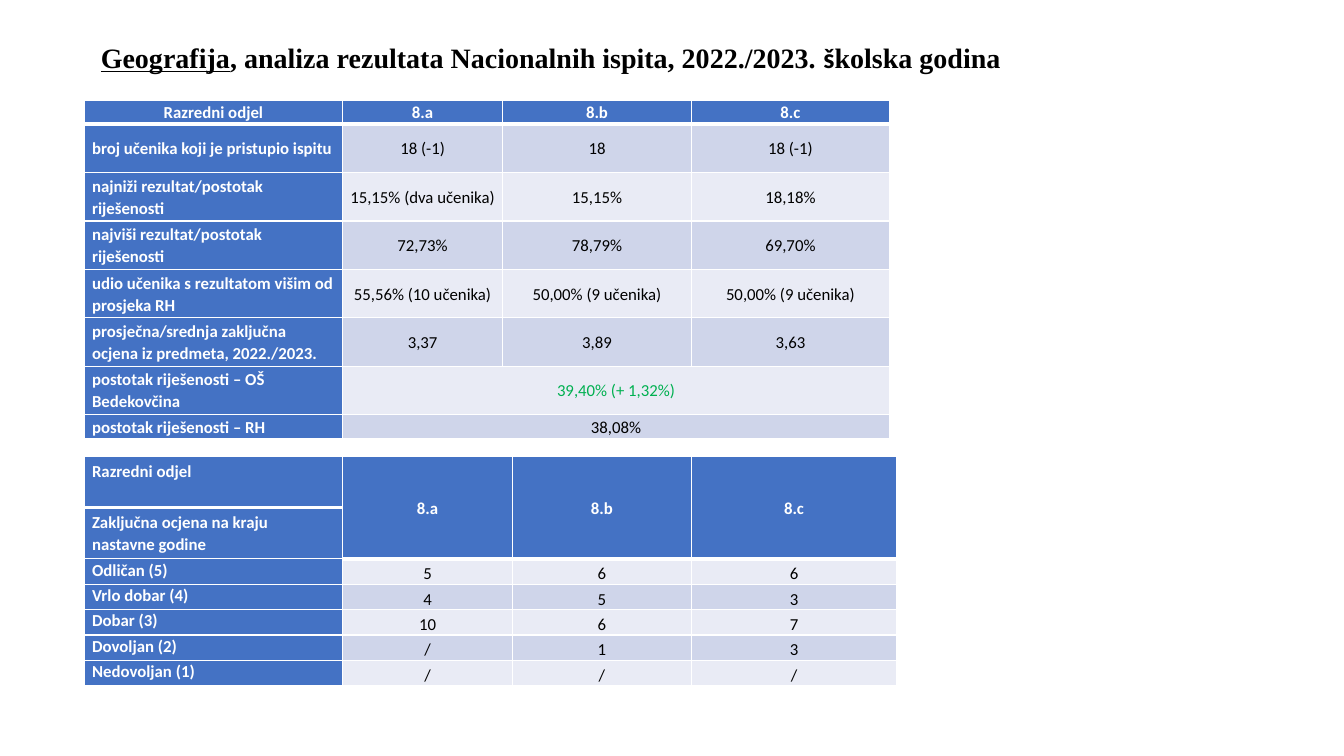
from dataclasses import dataclass

from lxml import etree
from pptx import Presentation
from pptx.dml.color import RGBColor
from pptx.enum import text as t
from pptx.oxml import ns
from pptx.util import Cm, Pt

TOP, MIDDLE, BOTTOM = t.MSO_ANCHOR.TOP, t.MSO_ANCHOR.MIDDLE, t.MSO_ANCHOR.BOTTOM

TITLE = [
    ("Geografija", {"underline": True}),
    (", analiza rezultata Nacionalnih ispita, 2022./2023. ", {}),
    ("š", {"font": "Calibri"}),
    ("kolska godina", {}),
]

# merges: (first row, first column, last row, last column)
# header_ends: for each column, the last row above the thick rule
RESULTS = {
    "top": 2.52,
    "columns": [6.5, 4.04, 4.75, 5.0],
    "heights": [0.61] + [1.22] * 6 + [0.61],
    "header_ends": [0, 0, 0, 0],
    "merges": [(6, 1, 6, 3), (7, 1, 7, 3)],
    "anchors": (MIDDLE, MIDDLE),
    "rows": [
        ["Razredni odjel", "8.a", "8.b", "8.c"],
        ["broj učenika koji je pristupio ispitu", "18 (-1)", "18", "18 (-1)"],
        ["najniži rezultat/postotak riješenosti", "15,15% (dva učenika)", "15,15%", "18,18%"],
        ["najviši rezultat/postotak riješenosti", "72,73%", "78,79%", "69,70%"],
        ["udio učenika s rezultatom višim od prosjeka RH",
         "55,56% (10 učenika)", "50,00% (9 učenika)", "50,00% (9 učenika)"],
        ["prosječna/srednja zaključna ocjena iz predmeta, 2022./2023.", "3,37", "3,89", "3,63"],
        ["postotak riješenosti – OŠ Bedekovčina", "39,40% (+ 1,32%)"],
        ["postotak riješenosti – RH", "38,08%"],
    ],
    "centred_label": True,
    "highlight": (6, 1),
}
GRADES = {
    "top": 11.5,
    "columns": [6.5, 4.29, 4.5, 5.18],
    "heights": [1.29] * 2 + [0.64] * 5,
    "header_ends": [0, 1, 1, 1],
    "merges": [(0, col, 1, col) for col in (1, 2, 3)],
    "anchors": (TOP, BOTTOM),
    "rows": [
        ["Razredni odjel", "8.a", "8.b", "8.c"],
        ["Zaključna ocjena na kraju nastavne godine"],
        ["Odličan (5)", "5", "6", "6"],
        ["Vrlo dobar (4)", "4", "5", "3"],
        ["Dobar (3)", "10", "6", "7"],
        ["Dovoljan (2)", "/", "1", "3"],
        ["Nedovoljan (1)", "/", "/", "/"],
    ],
    "centred_label": False,
    "highlight": None,
}


@dataclass(frozen=True)
class Theme:
    header: str = "4472C4"
    bands: tuple = ("E9EBF5", "CFD5EA")
    white: str = "FFFFFF"
    black: str = "000000"
    gain: str = "00B050"
    title_font: str = "Times New Roman"
    table_font: str = "Calibri"
    title_size: int = 20
    table_size: int = 12
    thin: int = 1
    thick: int = 3


THEME = Theme()
LEFT = 2.13


def write(frame, runs, *, font, size, color, bold=False, align=t.PP_ALIGN.LEFT, spacing=1.0):
    """Fill the frame's paragraph with (text, overrides) runs."""
    paragraph = frame.paragraphs[0]
    paragraph.alignment = align
    paragraph.line_spacing = spacing
    for words, changes in runs:
        run = paragraph.add_run()
        run.text = words
        run.font.name = changes.get("font", font)
        run.font.size = Pt(size)
        run.font.bold = bold
        run.font.underline = changes.get("underline", False)
        run.font.color.rgb = RGBColor.from_string(color)


def set_borders(cell, top, bottom):
    properties = cell._tc.get_or_add_tcPr()
    widths = {"lnL": THEME.thin, "lnR": THEME.thin, "lnT": top, "lnB": bottom}
    for place, (side, width) in enumerate(widths.items()):
        line = etree.Element(ns.qn(f"a:{side}"), w=str(Pt(width)))
        fill = etree.SubElement(line, ns.qn("a:solidFill"))
        etree.SubElement(fill, ns.qn("a:srgbClr"), val=THEME.white)
        properties.insert(place, line)


def add_class_table(slide, data):
    columns, heights, rows = data["columns"], data["heights"], data["rows"]
    table = slide.shapes.add_table(
        len(heights), len(columns), Cm(LEFT), Cm(data["top"]),
        Cm(sum(columns)), Cm(sum(heights))).table
    for column, width in zip(table.columns, columns):
        column.width = Cm(width)
    for row, height in zip(table.rows, heights):
        row.height = Cm(height)

    for r in range(len(heights)):
        for c, header_end in enumerate(data["header_ends"]):
            cell = table.cell(r, c)
            is_header = r <= header_end
            is_blue = is_header or c == 0
            cell.fill.solid()
            cell.fill.fore_color.rgb = RGBColor.from_string(
                THEME.header if is_blue else THEME.bands[r % 2])
            set_borders(cell,
                        THEME.thick if r == header_end + 1 else THEME.thin,
                        THEME.thick if is_header else THEME.thin)
            cell.margin_left = cell.margin_right = Cm(0.19)
            cell.margin_top = cell.margin_bottom = 0
            in_body = r > max(data["header_ends"])
            cell.vertical_anchor = data["anchors"][min(c, 1)] if in_body else MIDDLE
            if r == c == 0 and not data["centred_label"]:
                cell.vertical_anchor = TOP
                cell.margin_top = Cm(0.1)
            if c >= len(rows[r]):
                continue
            centred = c > 0 or (r == 0 and data["centred_label"])
            color = THEME.white if is_blue else THEME.black
            if (r, c) == data["highlight"]:
                color = THEME.gain
            write(cell.text_frame, [(rows[r][c], {})], font=THEME.table_font,
                  size=THEME.table_size, color=color, bold=is_blue, spacing=1.07,
                  align=t.PP_ALIGN.CENTER if centred else t.PP_ALIGN.LEFT)

    for top, left, bottom, right in data["merges"]:
        table.cell(top, left).merge(table.cell(bottom, right))


def main():
    deck = Presentation()
    deck.slide_width, deck.slide_height = Cm(33.87), Cm(19.05)
    slide = deck.slides.add_slide(deck.slide_layouts[6])
    for data in (RESULTS, GRADES):
        add_class_table(slide, data)
    title = slide.shapes.add_textbox(Cm(2.29), Cm(0.84), Cm(24.92), Cm(1.88)).text_frame
    title.word_wrap = True
    title.vertical_anchor = TOP
    title.margin_top = Cm(0.18)
    write(title, TITLE, font=THEME.title_font, size=THEME.title_size,
          color=THEME.black, bold=True)
    deck.save("out.pptx")


if __name__ == "__main__":
    main()
